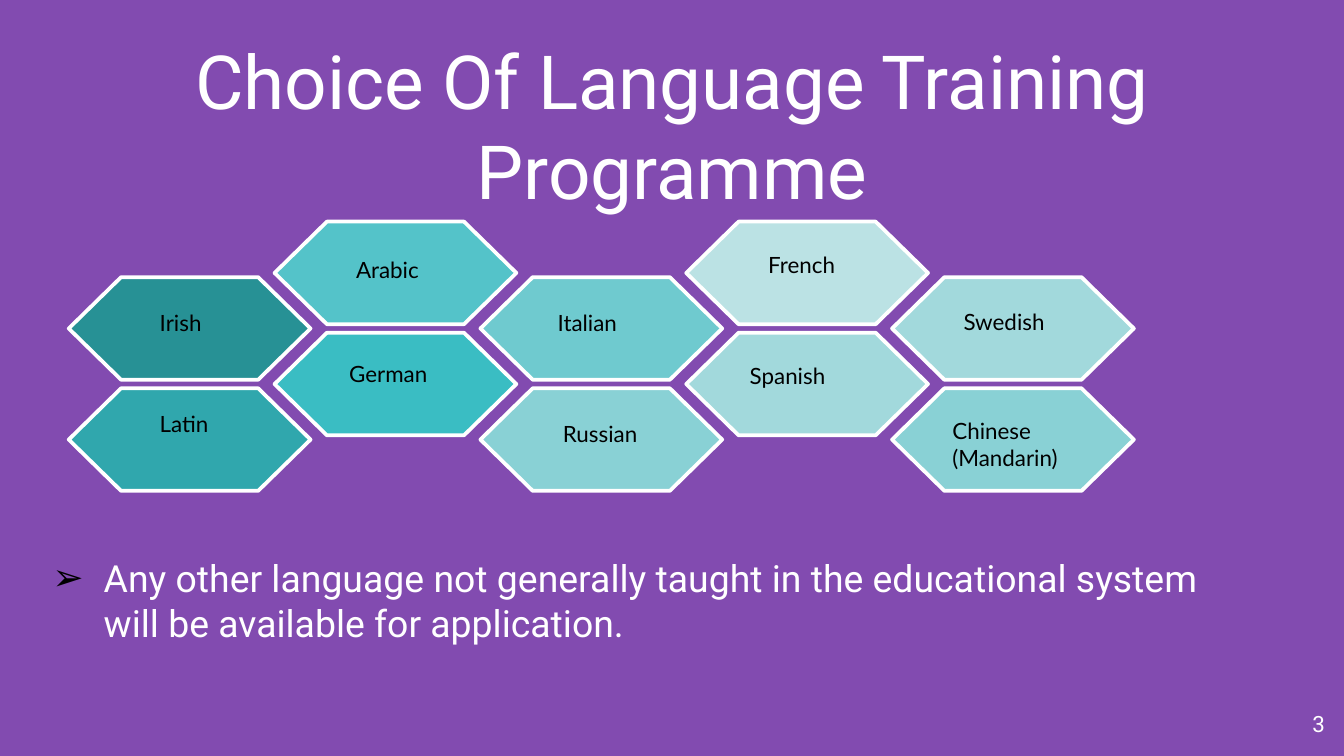
import pptx
import pptx.dml.color
import pptx.enum.shapes
import pptx.enum.text
import pptx.oxml.ns
import pptx.util
from dataclasses import dataclass
from lxml import etree

Cm = pptx.util.Cm
Align = pptx.enum.text.PP_ALIGN


@dataclass(frozen=True)
class Theme:
    background: str = "824BB0"
    light: str = "FFFFFF"
    dark: str = "000000"
    heading_font: str = "Roboto"
    label_font: str = "Lato"
    title_size: int = 40
    body_size: int = 20
    small_size: int = 12
    outline: int = 2


theme = Theme()


def rgb(value):
    return pptx.dml.color.RGBColor.from_string(value)


def write(box, text, place, size=theme.small_size, font=theme.heading_font,
          color=theme.light, align=Align.LEFT, inset=0.25):
    """Place the box (left, top, width, height in cm), fill it and return its paragraph."""
    box.left, box.top, box.width, box.height = map(Cm, place)
    frame = box.text_frame
    frame.word_wrap = True
    frame.auto_size = pptx.enum.text.MSO_AUTO_SIZE.NONE
    frame.vertical_anchor = pptx.enum.text.MSO_ANCHOR.TOP
    frame.margin_left = frame.margin_right = Cm(0.25)
    frame.margin_top = frame.margin_bottom = Cm(inset)
    para = frame.paragraphs[0]
    para.alignment = align
    para.space_before = pptx.util.Pt(0)
    span = para.add_run()
    span.text = text
    span.font.size = pptx.util.Pt(size)
    span.font.name = font
    span.font.color.rgb = rgb(color)
    return para


deck = pptx.Presentation()
deck.slide_width, deck.slide_height = Cm(25.4), Cm(14.29)
page = deck.slides.add_slide(deck.slide_layouts[1])
page.background.fill.solid()
page.background.fill.fore_color.rgb = rgb(theme.background)

write(page.shapes.title, "Choice Of Language Training Programme",
      (2.49, 0.53, 20.42, 3.68), size=theme.title_size, align=Align.CENTER, inset=0.13)

# Honeycomb: upper and lower cell of each column, every second column raised
columns = [("279195", "30A7AD"), ("54C3C9", "3ABDC3"), ("6FCACF", "89D1D5"),
           ("BBE2E4", "A2D9DC"), ("A2D9DC", "89D1D5")]
honeycomb = page.shapes.add_group_shape()
for column, fills in enumerate(columns):
    top = 4.19 if column % 2 else 5.24
    for row, fill in enumerate(fills):
        cell = honeycomb.shapes.add_shape(
            pptx.enum.shapes.MSO_SHAPE.HEXAGON,
            Cm(1.3 + 3.89 * column), Cm(top + 2.1 * row), Cm(4.57), Cm(1.94))
        cell.adjustments[0] = 0.51
        cell.shadow.inherit = False
        cell.fill.solid()
        cell.fill.fore_color.rgb = rgb(fill)
        cell.line.color.rgb = rgb(theme.light)
        cell.line.width = pptx.util.Pt(theme.outline)

labels = [("Irish", 2.77, 5.72), ("Latin", 2.77, 7.62),
          ("Arabic", 6.48, 4.72), ("German", 6.35, 6.68),
          ("Italian", 10.29, 5.72), ("Russian", 10.39, 7.82),
          ("French", 14.27, 4.62), ("Spanish", 13.92, 6.71),
          ("Swedish", 17.96, 5.69), ("Chinese (Mandarin)", 17.75, 7.75)]
for text, left, top in labels:
    size = (3.15, 1.27) if " " in text else (2.72, 0.76)
    box = page.shapes.add_textbox(0, 0, 0, 0)
    write(box, text, (left, top, *size), font=theme.label_font, color=theme.dark, inset=0.13)

note = write(page.placeholders[1],
             "Any other language not generally taught in the educational system "
             "will be available for application.",
             (0.74, 10.36, 22.56, 1.96), size=theme.body_size, inset=0.13)
properties = note._p.get_or_add_pPr()
properties.set("marL", str(Cm(0.97)))
properties.set("indent", str(-Cm(0.97)))
qn = pptx.oxml.ns.qn
bullet_color = etree.SubElement(properties, qn("a:buClr"))
etree.SubElement(bullet_color, qn("a:srgbClr"), val=theme.dark)
etree.SubElement(properties, qn("a:buChar"), char="➢")

page_number = page.shapes.add_textbox(0, 0, 0, 0)
write(page_number, "3", (23.77, 13.18, 1.52, 1.09), align=Align.RIGHT)

deck.save("out.pptx")
